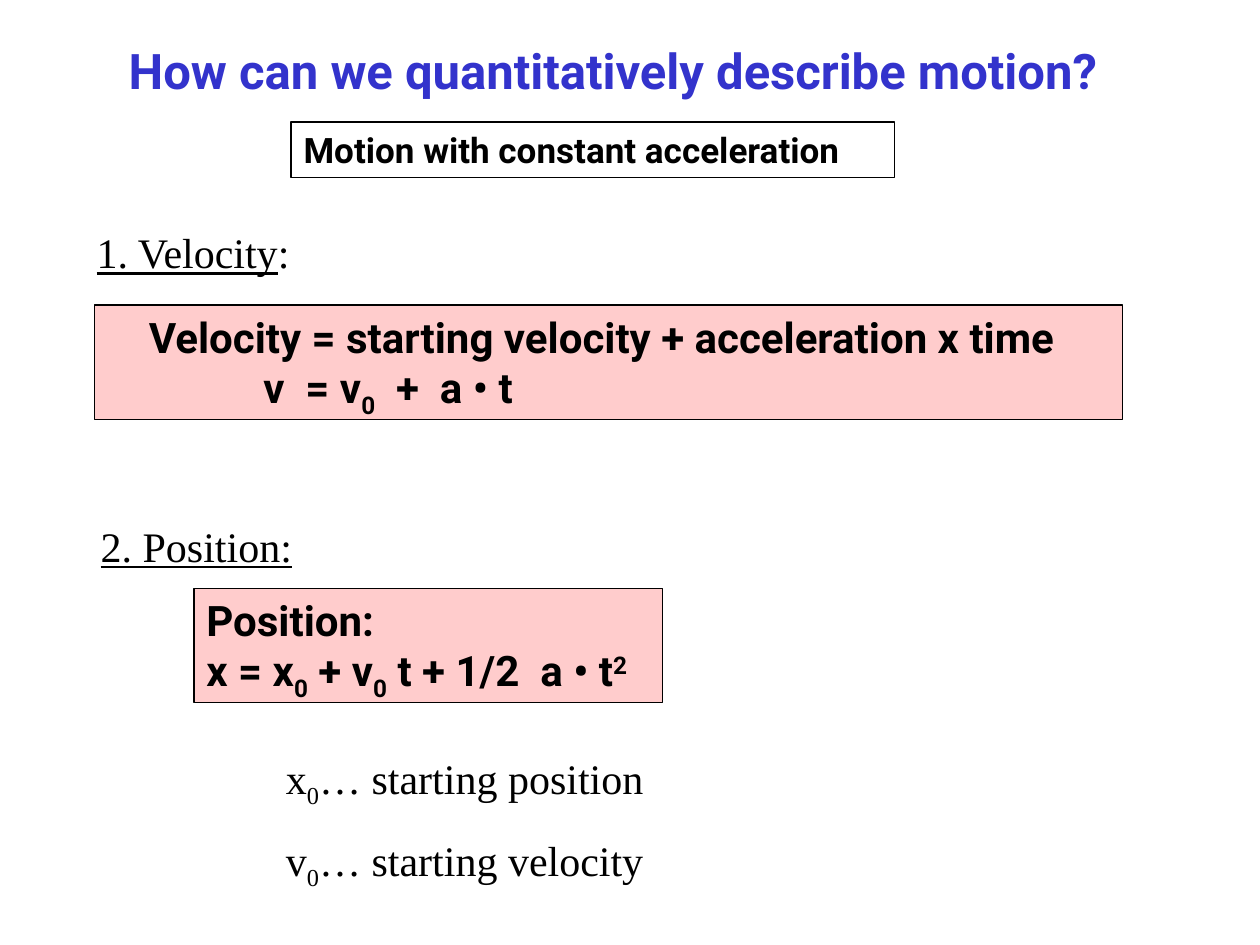
from dataclasses import dataclass
from typing import NamedTuple

from lxml import etree
from pptx import Presentation
from pptx import util as u
from pptx.dml.color import RGBColor
from pptx.enum import shapes, text
from pptx.oxml.ns import qn


@dataclass(frozen=True)
class Theme:
    ink: RGBColor = RGBColor(0x00, 0x00, 0x00)
    heading: RGBColor = RGBColor(0x33, 0x33, 0xCC)
    formula_fill: RGBColor = RGBColor(0xFF, 0xCC, 0xCC)
    sans: str = "Roboto"
    serif: str = "Times New Roman"
    title_size: int = 28
    subtitle_size: int = 20
    text_size: int = 24
    line_width: float = 0.75
    list_gap: int = 14


class Run(NamedTuple):
    text: str
    baseline: int = 0  # percent; negative is a subscript
    underline: bool = False


class Line(NamedTuple):
    runs: list[Run]
    indent: float = 0  # cm


class Place(NamedTuple):
    """Left, top, width and height in centimetres."""
    left: float
    top: float
    width: float
    height: float


class Box(NamedTuple):
    place: Place
    lines: list[Line]
    style: dict
    fill: RGBColor | None = None


THEME = Theme()
SUB, SUPER = -25, 30
TITLE = dict(name=THEME.sans, size=u.Pt(THEME.title_size), bold=True)
SUBTITLE = TITLE | dict(size=u.Pt(THEME.subtitle_size))
FORMULA = TITLE | dict(size=u.Pt(THEME.text_size))
PLAIN = dict(name=THEME.serif, size=u.Pt(THEME.text_size), bold=False)
ZERO = Run("0", SUB)

TITLE_PLACE = Place(2.34, 0.69, 21.34, 1.45)
TITLE_LINES = [Line([Run("How can we quantitatively describe motion?")])]

LEGEND_PLACE = Place(5.51, 15.04, 14.17, 2.79)
LEGEND_LINES = [
    Line([Run(symbol), ZERO, Run(f"… starting {meaning}")])
    for symbol, meaning in (("x", "position"), ("v", "velocity"))
]

FRAMED_BOXES = [
    Box(Place(5.87, 2.46, 12.17, 1.12),
        [Line([Run("Motion with constant acceleration")])], SUBTITLE),
    Box(Place(1.9, 6.15, 20.73, 2.31),
        [Line([Run("Velocity = starting velocity + acceleration x time")], 0.85),
         Line([Run("v  = v"), ZERO, Run("  +  a • t")], 3.16)],
        FORMULA, THEME.formula_fill),
    Box(Place(3.91, 11.86, 9.45, 2.31),
        [Line([Run("Position:")]),
         Line([Run("x = x"), ZERO, Run(" + v"), ZERO,
               Run(" t + 1/2  a • t"), Run("2", SUPER)])],
        FORMULA, THEME.formula_fill),
]

HEADINGS = [
    Box(Place(1.7, 4.45, 12.9, 1.27),
        [Line([Run("1. Velocity", underline=True), Run(":")])], PLAIN),
    Box(Place(1.78, 10.36, 5.51, 1.27),
        [Line([Run("2. Position:", underline=True)])], PLAIN),
]


def set_attrs(target, values: dict) -> None:
    for name, value in values.items():
        setattr(target, name, value)


def lengths(place: Place) -> list[u.Length]:
    return [u.Cm(value) for value in place]


def write(sp, lines: list[Line], style: dict,
          color: RGBColor = THEME.ink, gap: float = 0) -> None:
    """Fill a shape with left-aligned lines, gap points apart."""
    tf = sp.text_frame
    set_attrs(tf, dict(word_wrap=True, auto_size=text.MSO_AUTO_SIZE.NONE,
                       vertical_anchor=text.MSO_ANCHOR.TOP))
    for i, line in enumerate(lines):
        p = tf.add_paragraph() if i else tf.paragraphs[0]
        set_attrs(p, dict(alignment=text.PP_ALIGN.LEFT,
                          space_before=u.Pt(gap if i else 0)))
        pPr = p._p.get_or_add_pPr()
        pPr.set("marL", str(u.Cm(line.indent)))
        pPr.set("indent", "0")
        etree.SubElement(pPr, qn("a:buNone"))
        for run in line.runs:
            r = p.add_run()
            r.text = run.text
            set_attrs(r.font, style | dict(underline=run.underline))
            r.font.color.rgb = color
            if run.baseline:
                r.font._element.set("baseline", str(run.baseline * 1000))


def move(sp, place: Place) -> None:
    set_attrs(sp, dict(zip(Place._fields, lengths(place))))


def add_framed_box(s, box: Box) -> None:
    sp = s.shapes.add_shape(shapes.MSO_SHAPE.RECTANGLE, *lengths(box.place))
    sp.shadow.inherit = False
    if box.fill is None:
        sp.fill.background()
    else:
        sp.fill.solid()
        sp.fill.fore_color.rgb = box.fill
    sp.line.color.rgb = THEME.ink
    sp.line.width = u.Pt(THEME.line_width)
    write(sp, box.lines, box.style)


def add_heading(s, box: Box) -> None:
    sp = s.shapes.add_textbox(*lengths(box.place))
    write(sp, box.lines, box.style)


def main() -> None:
    prs = Presentation()
    set_attrs(prs, dict(slide_width=u.Cm(25.4), slide_height=u.Cm(19.05)))
    s = prs.slides.add_slide(prs.slide_layouts[1])

    title, legend = s.shapes.title, s.placeholders[1]
    move(title, TITLE_PLACE)
    write(title, TITLE_LINES, TITLE, THEME.heading)
    move(legend, LEGEND_PLACE)
    write(legend, LEGEND_LINES, PLAIN, gap=THEME.list_gap)

    for box in FRAMED_BOXES:
        add_framed_box(s, box)
    for box in HEADINGS:
        add_heading(s, box)
    prs.save("out.pptx")


if __name__ == "__main__":
    main()
